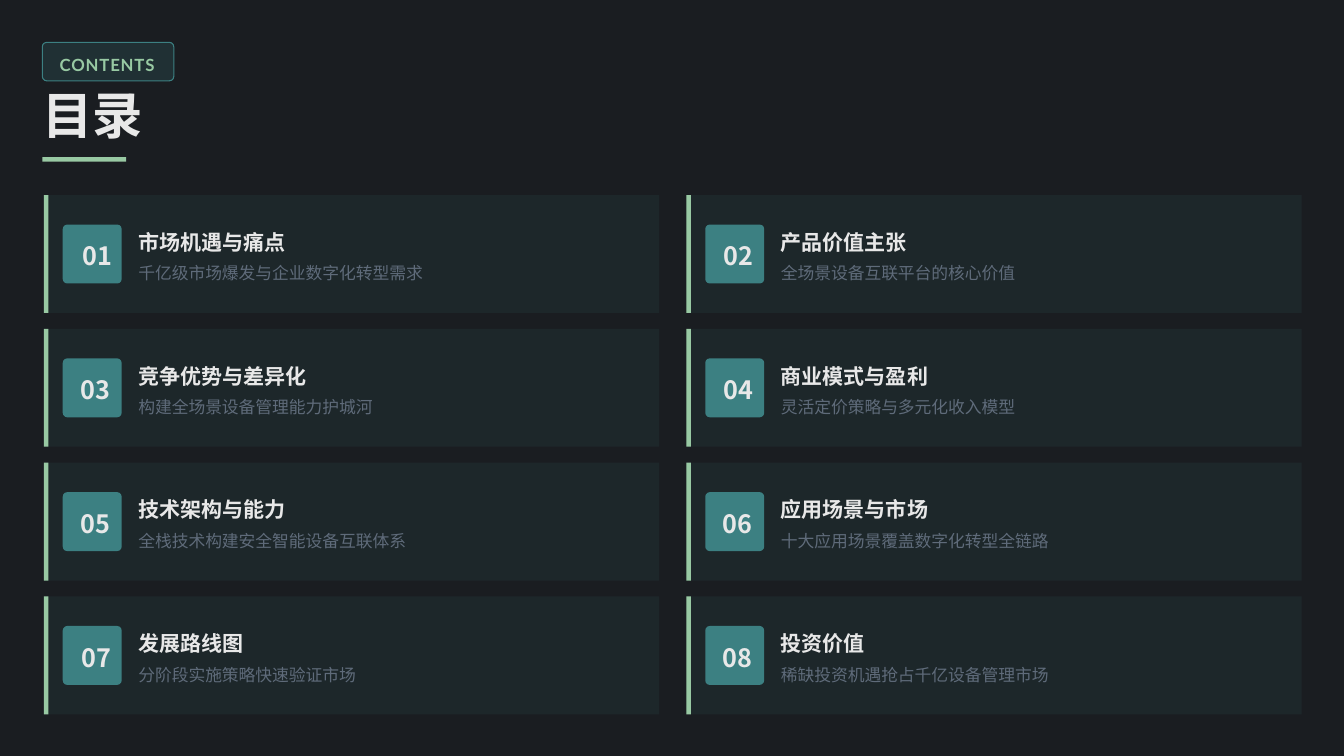
"""Build a dark contents slide with eight numbered section cards."""
from lxml import etree
from pptx import Presentation
from pptx import util as u
from pptx.dml.color import RGBColor
from pptx.enum import shapes, text
from pptx.oxml import ns

BACKGROUND = RGBColor(0x1A, 0x1D, 0x21)
TEAL = RGBColor(0x3C, 0x80, 0x82)
GREEN = RGBColor(0x98, 0xC9, 0xA3)
WHITE = RGBColor(0xE8, 0xE8, 0xE8)
GREY = RGBColor(0x5F, 0x6B, 0x7A)
LATIN = "Lato"
CHINESE = "Noto Sans CJK SC"

SECTIONS = [
    ("市场机遇与痛点", "千亿级市场爆发与企业数字化转型需求", 0.51),
    ("产品价值主张", "全场景设备互联平台的核心价值", 0.49),
    ("竞争优势与差异化", "构建全场景设备管理能力护城河", 0.49),
    ("商业模式与盈利", "灵活定价策略与多元化收入模型", 0.49),
    ("技术架构与能力", "全栈技术构建安全智能设备互联体系", 0.49),
    ("应用场景与市场", "十大应用场景覆盖数字化转型全链路", 0.48),
    ("发展路线图", "分阶段实施策略快速验证市场", 0.5),
    ("投资价值", "稀缺投资机遇抢占千亿设备管理市场", 0.48),
]


class ContentsSlide:
    """Hold the slide and draw its elements in one style."""

    def __init__(self, presentation):
        self.slide = presentation.slides.add_slide(presentation.slide_layouts[5])
        fill = self.slide.background.fill
        fill.solid()
        fill.fore_color.rgb = BACKGROUND

    def set_text(self, shape, content, size, color, font=LATIN, bold=True, spacing=1.0, tracking=0):
        frame = shape.text_frame
        frame.margin_left = frame.margin_right = frame.margin_top = frame.margin_bottom = 0
        frame.word_wrap = True
        frame.auto_size = text.MSO_AUTO_SIZE.NONE
        frame.vertical_anchor = text.MSO_ANCHOR.MIDDLE
        frame.text = content
        paragraph = frame.paragraphs[0]
        paragraph.alignment = text.PP_ALIGN.LEFT
        paragraph.line_spacing = spacing
        paragraph.font.size = u.Pt(size)
        paragraph.font.bold = bold
        paragraph.font.color.rgb = color
        paragraph.font.name = font
        properties = paragraph._p.pPr.find(ns.qn("a:defRPr"))
        latin = properties.find(ns.qn("a:latin"))
        east_asian = etree.Element(ns.qn("a:ea"), typeface=CHINESE)
        latin.addnext(east_asian)
        if tracking:
            properties.set("spc", str(round(tracking * 100)))

    def title(self, content, left, top, width, height):
        title = self.slide.shapes.title
        title.left, title.top = u.Inches(left), u.Inches(top)
        title.width, title.height = u.Inches(width), u.Inches(height)
        self.set_text(title, content, 48, WHITE, CHINESE, spacing=0.8)

    def label(self, content, left, top, width, height, *style, **options):
        box = self.slide.shapes.add_textbox(
            u.Inches(left), u.Inches(top), u.Inches(width), u.Inches(height))
        self.set_text(box, content, *style, **options)

    def block(self, left, top, width, height, color, opacity=100, radius=0, outline=None):
        kind = shapes.MSO_SHAPE.ROUNDED_RECTANGLE if radius else shapes.MSO_SHAPE.RECTANGLE
        shape = self.slide.shapes.add_shape(
            kind, u.Inches(left), u.Inches(top), u.Inches(width), u.Inches(height))
        shape.shadow.inherit = False
        if radius:
            shape.adjustments[0] = radius / min(width, height)
        shape.fill.solid()
        shape.fill.fore_color.rgb = color
        if opacity < 100:
            fill_color = shape._element.spPr.find(ns.qn("a:solidFill"))[0]
            etree.SubElement(fill_color, ns.qn("a:alpha"), val=str(opacity * 1000))
        if outline is None:
            shape.line.fill.background()
        else:
            shape.line.color.rgb = outline
            shape.line.width = u.Pt(1)

    def card(self, left, top, number, heading, summary, number_offset):
        self.block(left, top, 8.14, 1.56, TEAL, opacity=10)
        self.block(left, top, 0.06, 1.56, GREEN)
        self.block(left + 0.25, top + 0.39, 0.78, 0.78, TEAL, radius=0.06)
        self.label(f"{number:02d}", left + number_offset, top + 0.56, 0.49, 0.44,
                   24, WHITE, CHINESE, spacing=1.1)
        self.label(heading, left + 1.25, top + 0.39, 3.92, 0.39, 20, WHITE, spacing=1.2)
        self.label(summary, left + 1.25, top + 0.83, 3.92, 0.33,
                   16, GREY, bold=False, spacing=1.3)


def main():
    presentation = Presentation()
    presentation.slide_width = u.Inches(17.78)
    presentation.slide_height = u.Inches(10)
    contents = ContentsSlide(presentation)
    contents.block(0.56, 0.56, 1.74, 0.51, TEAL, opacity=20, radius=0.06, outline=TEAL)
    contents.label("CONTENTS", 0.79, 0.67, 1.38, 0.29, 16, GREEN, spacing=1.3, tracking=0.8)
    contents.title("目录", 0.56, 1.25, 17, 0.67)
    contents.block(0.56, 2.08, 1.11, 0.06, GREEN)
    for index, (heading, summary, number_offset) in enumerate(SECTIONS):
        row, column = divmod(index, 2)
        contents.card(0.58 + 8.5 * column, 2.58 + 1.77 * row,
                      index + 1, heading, summary, number_offset)
    presentation.save("out.pptx")


if __name__ == "__main__":
    main()
